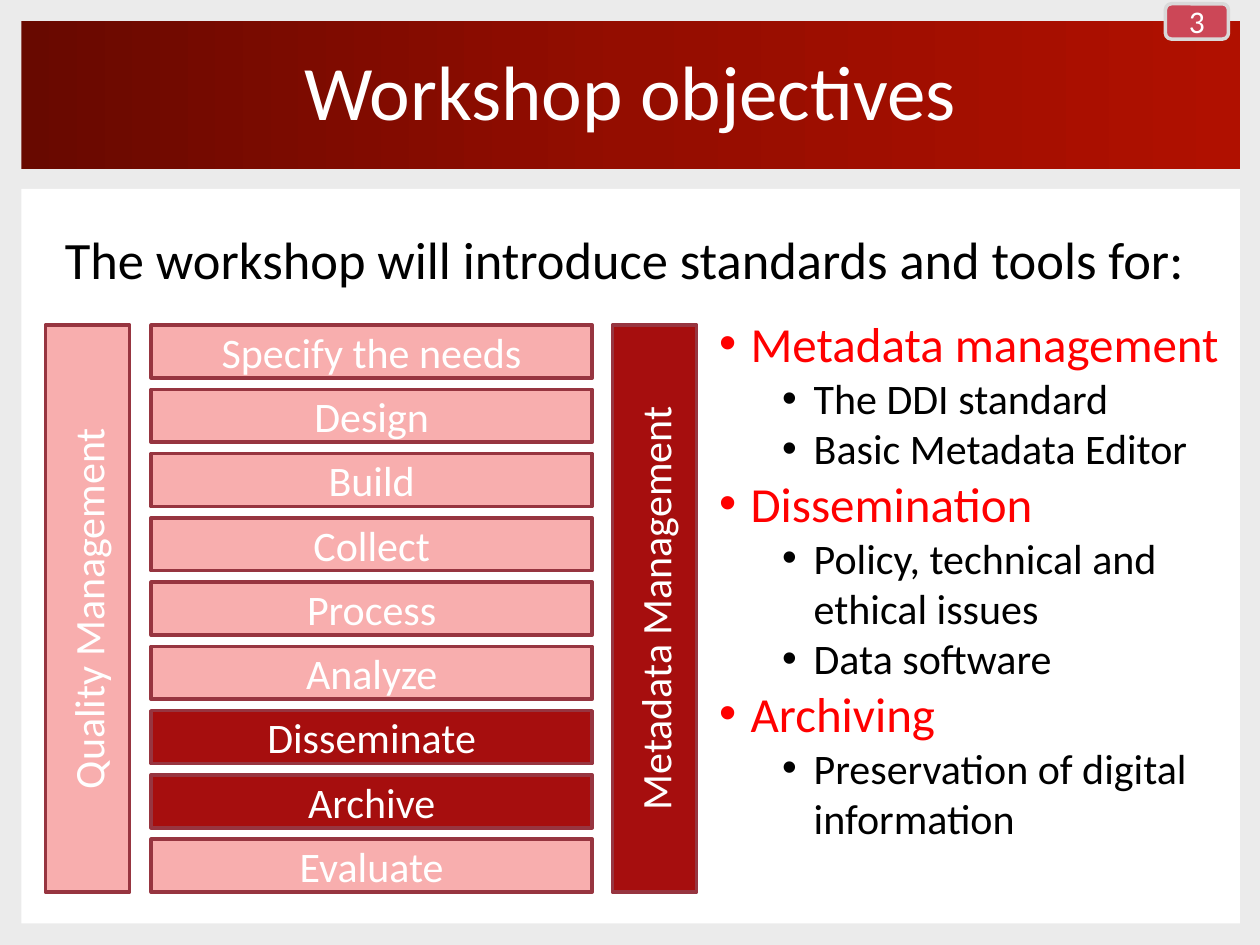
from copy import deepcopy

from lxml.etree import SubElement
from pptx import Presentation
from pptx.dml.color import RGBColor
from pptx.enum.shapes import MSO_SHAPE as Shape
from pptx.enum.text import MSO_ANCHOR as Anchor, MSO_AUTO_SIZE as AutoSize, PP_ALIGN as Align
from pptx.oxml.ns import qn
from pptx.util import Inches, Pt

FONT = "Calibri"
WHITE, BLACK, RED = "FFFFFF", "000000", "FF0000"
PALE, DARK, BORDER = "F8AEAE", "A60E0E", "973540"
BACKGROUND, BADGE, BADGE_BORDER = "EBEBEB", "CC4757", "D9D9D9"
TITLE_GRADIENT = [(0, "680900"), (0.5, "940D00"), (1, "B01000")]

PHASES = ["Specify the needs", "Design", "Build", "Collect", "Process",
          "Analyze", "Disseminate", "Archive", "Evaluate"]
COVERED_PHASES = {"Disseminate", "Archive"}
DIAGRAM_TOP, DIAGRAM_HEIGHT, PHASE_HEIGHT = 2.58, 4.5, 0.42

TOPICS = [
    ("Metadata management", ["The DDI standard", "Basic Metadata Editor"]),
    ("Dissemination", ["Policy, technical and ethical issues", "Data software"]),
    ("Archiving", ["Preservation of digital information"]),
]


def rgb(value):
    return RGBColor.from_string(value)


def format_paragraph(paragraph, size, color, align=Align.CENTER):
    paragraph.alignment = align
    for run in paragraph.runs:
        run.font.name = FONT
        run.font.size = Pt(size)
        run.font.color.rgb = rgb(color)


def indent(paragraph, left, first):
    properties = paragraph._p.get_or_add_pPr()
    properties.set("marL", str(Inches(left)))
    properties.set("indent", str(Inches(first)))
    return properties


def add_box(slide, kind, left, top, width, height, fill, line=None,
            text="", size=24, vertical=False):
    shape = slide.shapes.add_shape(
        kind, Inches(left), Inches(top), Inches(width), Inches(height))
    shape.shadow.inherit = False
    shape.fill.solid()
    shape.fill.fore_color.rgb = rgb(fill)
    if line:
        shape.line.color.rgb = rgb(line)
        shape.line.width = Pt(2)
    else:
        shape.line.fill.background()
    if text:
        frame = shape.text_frame
        frame.text = text
        frame.vertical_anchor = Anchor.MIDDLE
        format_paragraph(frame.paragraphs[0], size, WHITE)
        if vertical:
            frame._txBody.bodyPr.set("vert", "vert270")


def add_text_frame(slide, left, top, width, height):
    box = slide.shapes.add_textbox(
        Inches(left), Inches(top), Inches(width), Inches(height))
    box.text_frame.word_wrap = True
    return box.text_frame


def fill_gradient(shape, stops):
    shape.fill.gradient()
    shape.fill.gradient_angle = 0
    first = shape.fill._fill._gradFill.gsLst[0]
    first.addnext(deepcopy(first))
    for stop, (position, color) in zip(shape.fill.gradient_stops, stops):
        stop.position = position
        stop.color.rgb = rgb(color)


def format_title(title):
    title.left, title.top = Inches(0.17), Inches(0.17)
    title.width, title.height = Inches(9.67), Inches(1.17)
    fill_gradient(title, TITLE_GRADIENT)
    frame = title.text_frame
    frame.text = "Workshop objectives"
    frame.auto_size = AutoSize.NONE
    frame.vertical_anchor = Anchor.MIDDLE
    frame.margin_top = frame.margin_bottom = Inches(0.2)
    frame.paragraphs[0].line_spacing = 0.9
    format_paragraph(frame.paragraphs[0], 44, WHITE)


def add_intro(slide):
    paragraph = add_text_frame(slide, 0.17, 1.5, 9.67, 1).paragraphs[0]
    paragraph.text = "The workshop will introduce standards and tools for: "
    paragraph.line_spacing = 1.5
    indent(paragraph, 0.38, -0.38)
    format_paragraph(paragraph, 30, BLACK)


def add_bullet(paragraph, text, level, size, color):
    paragraph.text = text
    paragraph.level = level
    format_paragraph(paragraph, size, color, Align.LEFT)
    properties = indent(paragraph, 0.25 + 0.5 * level, -0.25)
    SubElement(properties, qn("a:buFont"), typeface="Arial")
    SubElement(properties, qn("a:buChar"), char="•")


def add_topics(slide):
    frame = add_text_frame(slide, 5.61, 2.44, 4.33, 4.34)
    frame.auto_size = AutoSize.SHAPE_TO_FIT_TEXT
    paragraph = frame.paragraphs[0]
    for number, (topic, details) in enumerate(TOPICS):
        if number:
            paragraph = frame.add_paragraph()
        add_bullet(paragraph, topic, 0, 28, RED)
        for detail in details:
            add_bullet(frame.add_paragraph(), detail, 1, 24, BLACK)


def add_diagram(slide):
    # Production phases, evenly spread over the diagram height
    step = (DIAGRAM_HEIGHT - PHASE_HEIGHT) / (len(PHASES) - 1)
    for row, phase in enumerate(PHASES):
        fill = DARK if phase in COVERED_PHASES else PALE
        add_box(slide, Shape.RECTANGLE, 1.2, DIAGRAM_TOP + row * step, 3.5,
                PHASE_HEIGHT, fill, BORDER, phase)
    # Processes that span all phases
    for left, fill, text in [(4.86, DARK, "Metadata Management"),
                             (0.36, PALE, "Quality Management")]:
        add_box(slide, Shape.RECTANGLE, left, DIAGRAM_TOP, 0.67,
                DIAGRAM_HEIGHT, fill, BORDER, text, vertical=True)


def main():
    presentation = Presentation()
    presentation.slide_width, presentation.slide_height = Inches(10), Inches(7.5)
    slide = presentation.slides.add_slide(presentation.slide_layouts[5])
    slide.background.fill.solid()
    slide.background.fill.fore_color.rgb = rgb(BACKGROUND)

    format_title(slide.shapes.title)
    # White content panel
    add_box(slide, Shape.RECTANGLE, 0.17, 1.5, 9.67, 5.83, WHITE)
    add_intro(slide)
    add_topics(slide)
    add_diagram(slide)
    # Slide number badge
    add_box(slide, Shape.ROUNDED_RECTANGLE, 9.25, 0.03, 0.5, 0.28,
            BADGE, BADGE_BORDER, "3", 18)
    presentation.save("out.pptx")


if __name__ == "__main__":
    main()
